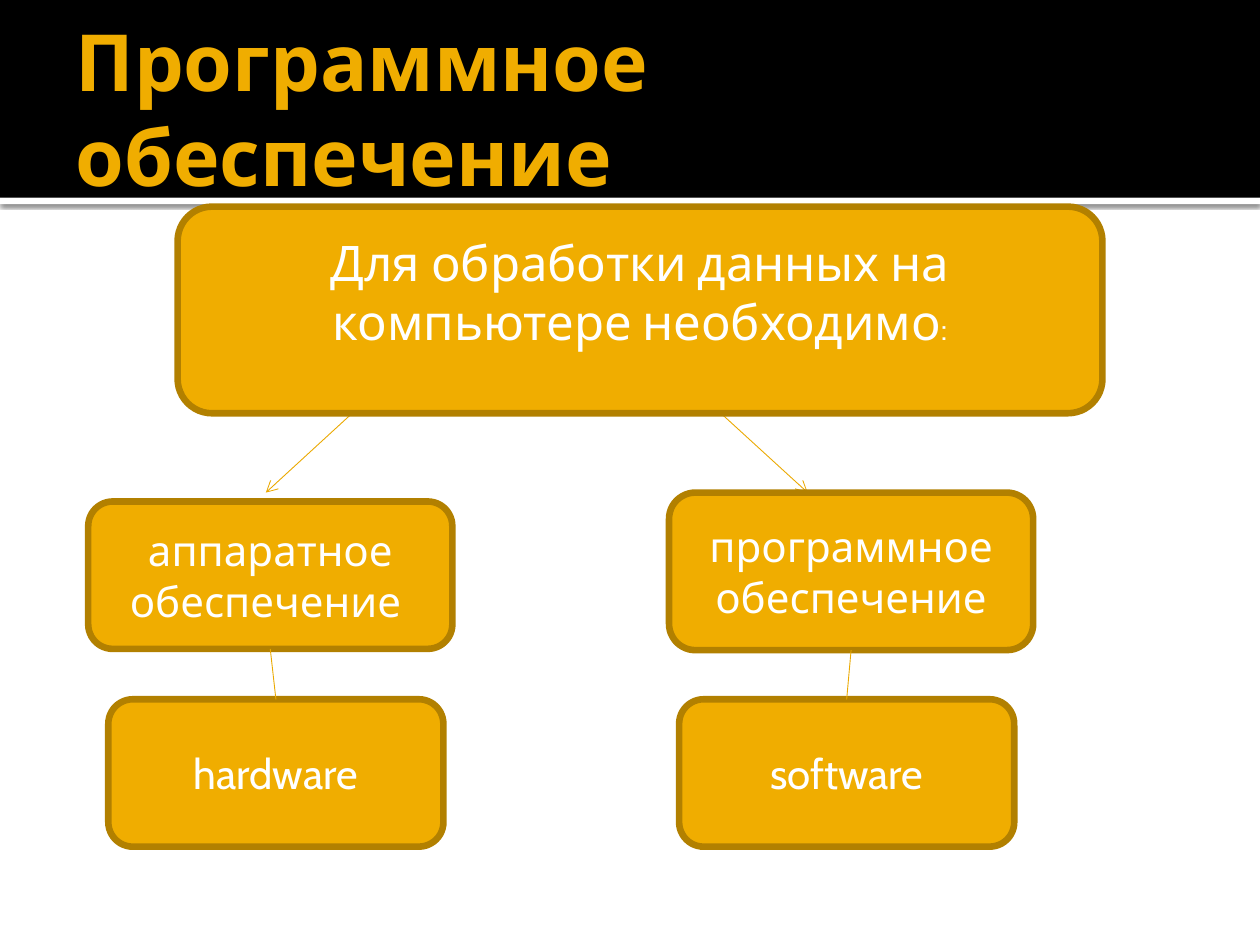
from lxml import etree
from pptx import Presentation, util as u
from pptx.dml.color import RGBColor
from pptx.enum import shapes, text
from pptx.oxml import parse_xml
from pptx.oxml.ns import nsdecls, qn

# Theme
THEME = dict(
    font="Cabin", black="000000", white="FFFFFF",
    gold="F0AD00", edge="B28000", link="EBA900",
    title=45, lead=28, label=24, small=18, border=3.78, thin=0.5,
)

# Content: each box is (runs, centre x, top, width, height), in % of the slide
TITLE = "Программное обеспечение"
LEAD = ([("Для обработки данных на компьютере необходимо", "lead"), (":", "small")],
        50.8, 21.87, 73.4, 21.87)
BRANCHES = [  # upper box, lower box, arrow into the upper box
    dict(upper=([("аппаратное обеспечение ", "label")], 21.45, 53.07, 28.9, 15.6),
         lower=([("hardware", "label")], 21.9, 74, 26.6, 15.6),
         arrow=(29.7, 41.6, 21.1, 52.13)),
    dict(upper=([("программное обеспечение", "label")], 67.55, 52.13, 28.9, 16.67),
         lower=([("software", "label")], 67.2, 74, 26.6, 15.6),
         arrow=(54.7, 40.67, 64.1, 52.13)),
]
BAND, RULE = 20.93, 0.67

prs = Presentation()
prs.slide_width, prs.slide_height = u.Inches(10), u.Inches(7.5)
s = prs.slides.add_slide(prs.slide_layouts[5])


def rgb(name):
    return RGBColor.from_string(THEME[name])


def share(*values):
    """Turn alternating x, y percentages into slide lengths."""
    sides = prs.slide_width, prs.slide_height
    return [int(sides[i % 2] * v / 100) for i, v in enumerate(values)]


def add_run(p, words, size, color):
    r = p.add_run()
    r.text = words
    r.font.name, r.font.size = THEME["font"], u.Pt(THEME[size])
    r.font.color.rgb = rgb(color)
    return r


def add_strip(top, height, color):
    sp = s.shapes.add_shape(shapes.MSO_SHAPE.RECTANGLE, *share(0, top, 100, height))
    sp.shadow.inherit = False
    sp.fill.solid()
    sp.fill.fore_color.rgb = rgb(color)
    sp.line.fill.background()
    return sp


def add_box(runs, centre, top, width, height):
    sp = s.shapes.add_shape(shapes.MSO_SHAPE.ROUNDED_RECTANGLE,
                            *share(centre - width / 2, top, width, height))
    sp.shadow.inherit = False
    sp.fill.solid()
    sp.fill.fore_color.rgb = rgb("gold")
    sp.line.color.rgb, sp.line.width = rgb("edge"), u.Pt(THEME["border"])
    tf = sp.text_frame
    tf.word_wrap, tf.vertical_anchor = True, text.MSO_ANCHOR.MIDDLE
    p = tf.paragraphs[0]
    p.alignment = text.PP_ALIGN.CENTER
    for words, size in runs:
        add_run(p, words, size, "white")
    return sp


def add_link(ends=(0, 0, 0, 0), arrow=False):
    c = s.shapes.add_connector(shapes.MSO_CONNECTOR.STRAIGHT, *share(*ends))
    c.line.color.rgb, c.line.width = rgb("link"), u.Pt(THEME["thin"])
    if arrow:
        etree.SubElement(c.line._get_or_add_ln(), qn("a:tailEnd"), type="arrow")
    etree.SubElement(c._element.spPr, qn("a:effectLst"))
    return c


# Header: white rule with a soft shadow, then the black band
rule = add_strip(BAND, RULE, "white")
rule._element.spPr.find(qn("a:effectLst")).append(parse_xml(
    f'<a:outerShdw {nsdecls("a")} blurRad="{u.Pt(2.5)}" dist="{u.Pt(0.8)}" dir="5400000" '
    'rotWithShape="0"><a:srgbClr val="000000"><a:alpha val="60000"/></a:srgbClr></a:outerShdw>'))
add_strip(0, BAND, "black")

# Title, brought in front of the band
title = s.shapes.title
title.left, title.top, title.width, title.height = share(5, 2.27, 90, 18.27)
s.shapes._spTree.append(title._element)
tf = title.text_frame
tf.word_wrap, tf.auto_size = True, text.MSO_AUTO_SIZE.NONE
tf.vertical_anchor = text.MSO_ANCHOR.MIDDLE
tf.margin_left, tf.margin_right = u.Inches(0.1), u.Inches(0.05)
tf.margin_top = tf.margin_bottom = u.Inches(0.05)
p = tf.paragraphs[0]
p.alignment = text.PP_ALIGN.LEFT
add_run(p, TITLE, "title", "gold").font.bold = True

# Arrows lie behind the boxes
for branch in BRANCHES:
    add_link(branch["arrow"], arrow=True)

# Boxes, each pair joined bottom to top
for branch in BRANCHES:
    upper, lower = add_box(*branch["upper"]), add_box(*branch["lower"])
    link = add_link()
    link.begin_connect(upper, 2)
    link.end_connect(lower, 0)

lead = add_box(*LEAD)
lead.text_frame.margin_bottom = u.Inches(0.35)

prs.save("out.pptx")
